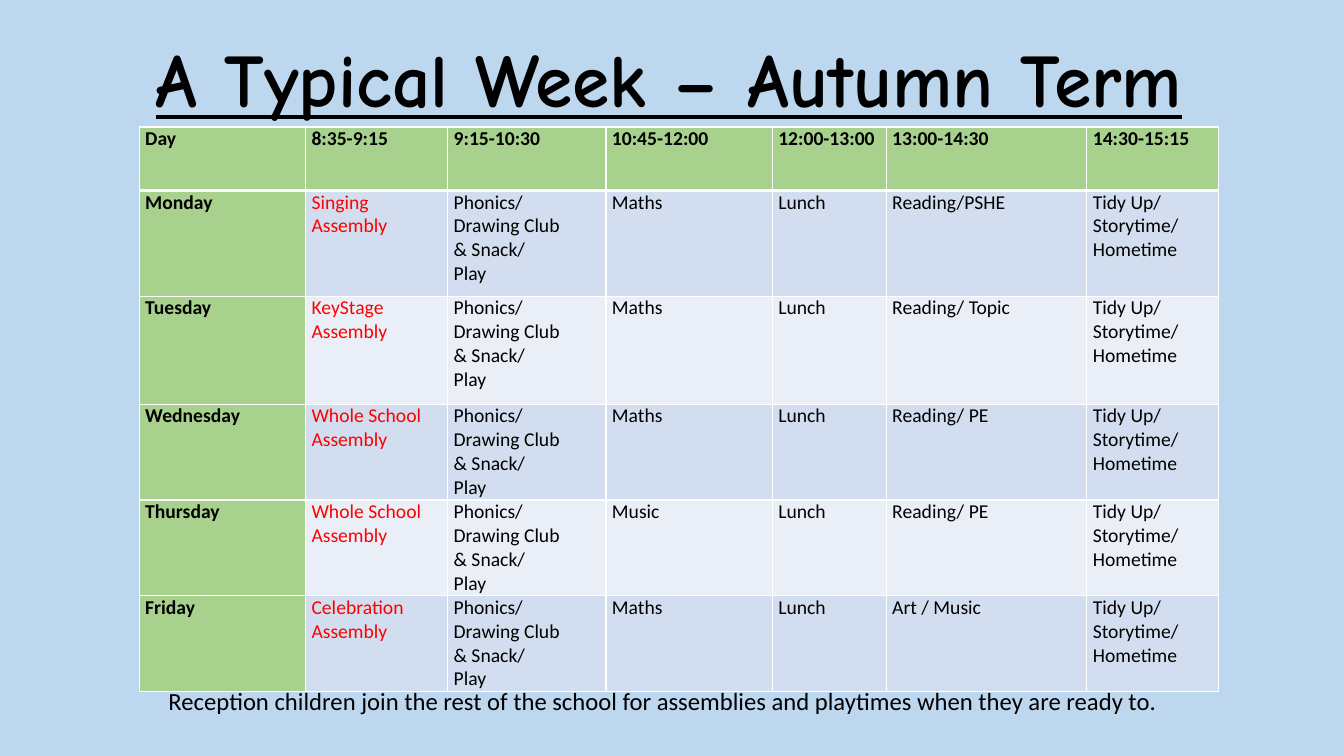
from lxml import etree
from pptx import Presentation
from pptx import util as u
from pptx.dml import color
from pptx.enum import text
from pptx.oxml import ns

SKY, GREEN, BLACK, RED, WHITE = "BDD7EE", "A9D18E", "000000", "FF0000", "FFFFFF"
BANDS = ["D2DEEF", "EAEFF7"]
COLUMN_WIDTHS = [1.65, 1.41, 1.57, 1.65, 1.13, 1.99, 1.31]
ROW_HEIGHTS = [0.63, 1.05, 1.07, 0.95, 0.95, 0.95]

TIMES = ["Day", "8:35-9:15", "9:15-10:30", "10:45-12:00",
         "12:00-13:00", "13:00-14:30", "14:30-15:15"]
PHONICS = "Phonics/ \vDrawing Club\n& Snack/\nPlay"
TIDY_UP = "Tidy Up/ Storytime/\vHometime"
# Day, assembly, late morning and early afternoon; the rest is the same daily
WEEK = [
    ("Monday", "Singing Assembly", "Maths", "Reading/PSHE"),
    ("Tuesday", "KeyStage\nAssembly", "Maths", "Reading/ Topic"),
    ("Wednesday", "Whole School\nAssembly", "Maths", "Reading/ PE"),
    ("Thursday", "Whole School\nAssembly", "Music", "Reading/ PE"),
    ("Friday", "Celebration\nAssembly", "Maths", "Art / Music"),
]


def rgb(value):
    return color.RGBColor.from_string(value)


def set_font(para, name, size, ink=BLACK, bold=False):
    para.font.name = name
    para.font.size = u.Pt(size)
    para.font.bold = bold
    para.font.color.rgb = rgb(ink)


def place(shape, box):
    shape.left, shape.top, shape.width, shape.height = map(u.Inches, box)


def centre_line(frame, wording):
    """Put one centred line in the middle of a text frame."""
    frame.word_wrap = True
    frame.auto_size = text.MSO_AUTO_SIZE.NONE
    frame.vertical_anchor = text.MSO_ANCHOR.MIDDLE
    frame.text = wording
    para = frame.paragraphs[0]
    para.alignment = text.PP_ALIGN.CENTER
    para.line_spacing = 0.9
    return para


def add_title(page, box):
    title = page.shapes.title
    place(title, box)
    para = centre_line(title.text_frame, "A Typical Week – Autumn Term")
    set_font(para, "Comic Neue", 54, bold=True)
    para.font.underline = True


def set_borders(cell, top, bottom):
    """Draw white borders; top and bottom are widths in points."""
    properties = cell._tc.get_or_add_tcPr()
    for side, width in (("L", 1), ("R", 1), ("T", top), ("B", bottom)):
        line = etree.SubElement(properties, ns.qn(f"a:ln{side}"), w=str(u.Pt(width)))
        fill = etree.SubElement(line, ns.qn("a:solidFill"))
        etree.SubElement(fill, ns.qn("a:srgbClr"), val=WHITE)


def fill_cell(cell, wording, row, column):
    heading = row == 0 or column == 0
    set_borders(cell, top=3 if row == 1 else 1, bottom=3 if row == 0 else 1)
    cell.fill.solid()
    cell.fill.fore_color.rgb = rgb(GREEN if heading else BANDS[(row - 1) % 2])
    cell.margin_left = cell.margin_right = u.Inches(0.06)
    cell.margin_top = cell.margin_bottom = 0
    cell.text_frame.text = wording
    ink = RED if column == 1 and row > 0 else BLACK
    for para in cell.text_frame.paragraphs:
        set_font(para, "Calibri", 14, ink, heading)


def add_timetable(page, left, top):
    rows = [TIMES] + [
        [day, assembly, PHONICS, morning, "Lunch", afternoon, TIDY_UP]
        for day, assembly, morning, afternoon in WEEK
    ]
    box = (left, top, sum(COLUMN_WIDTHS), sum(ROW_HEIGHTS))
    table = page.shapes.add_table(len(rows), len(TIMES), *map(u.Inches, box)).table
    for column, width in zip(table.columns, COLUMN_WIDTHS):
        column.width = u.Inches(width)
    for row, height in zip(table.rows, ROW_HEIGHTS):
        row.height = u.Inches(height)
    for r, entries in enumerate(rows):
        for c, wording in enumerate(entries):
            fill_cell(table.cell(r, c), wording, r, c)


def add_note(page, box):
    note = page.shapes.add_textbox(*map(u.Inches, box))
    para = centre_line(note.text_frame, "Reception children join the rest of the school for "
                       "assemblies and playtimes when they are ready to.")
    set_font(para, "Calibri", 17.6)


def main():
    deck = Presentation()
    deck.slide_width, deck.slide_height = u.Inches(13.33), u.Inches(7.5)
    page = deck.slides.add_slide(deck.slide_layouts[5])
    page.background.fill.solid()
    page.background.fill.fore_color.rgb = rgb(SKY)
    add_title(page, (1.31, 0.31, 10.65, 1.03))
    add_timetable(page, 1.38, 1.26)
    add_note(page, (1.25, 6.46, 10.65, 1.03))
    deck.save("out.pptx")


if __name__ == "__main__":
    main()
